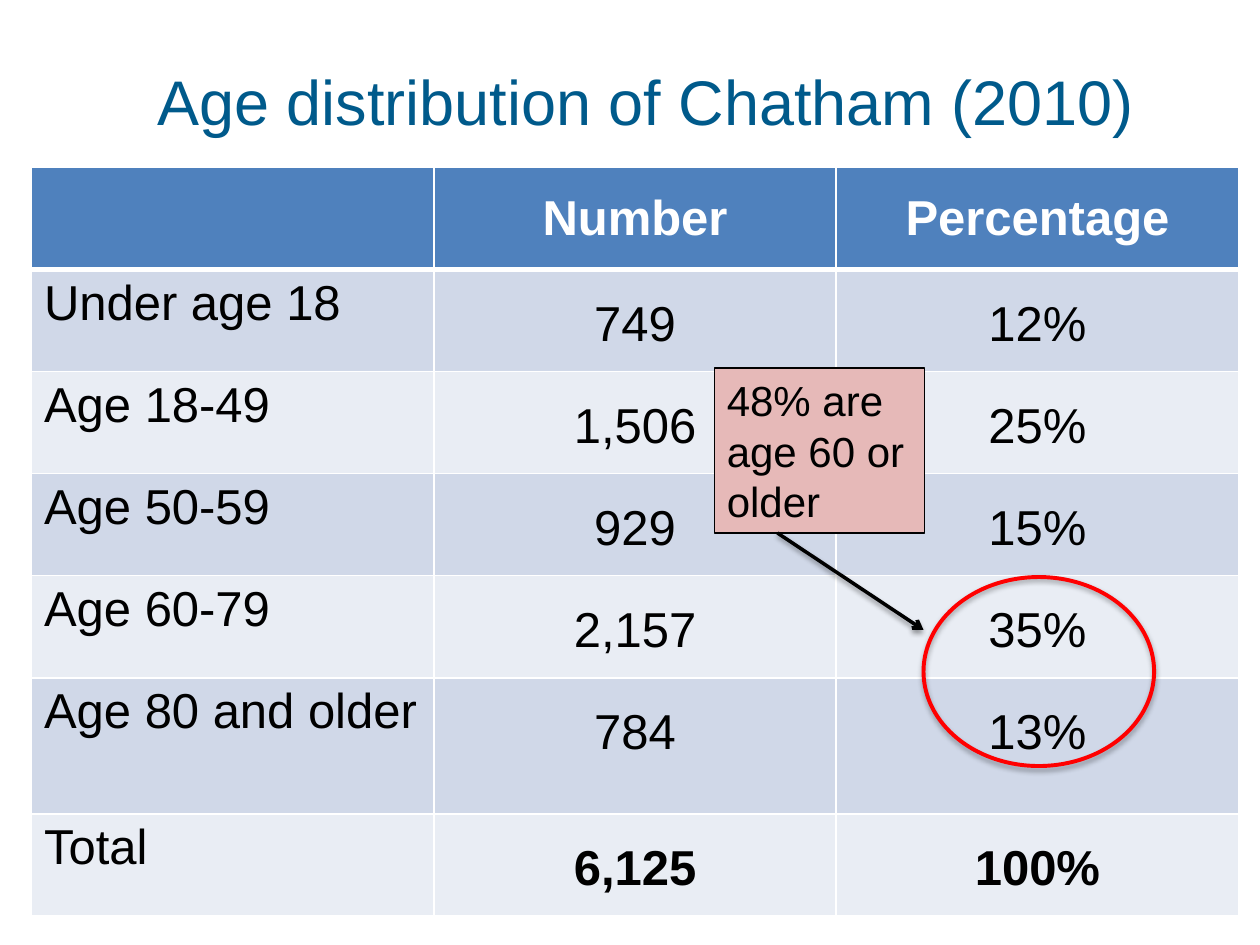
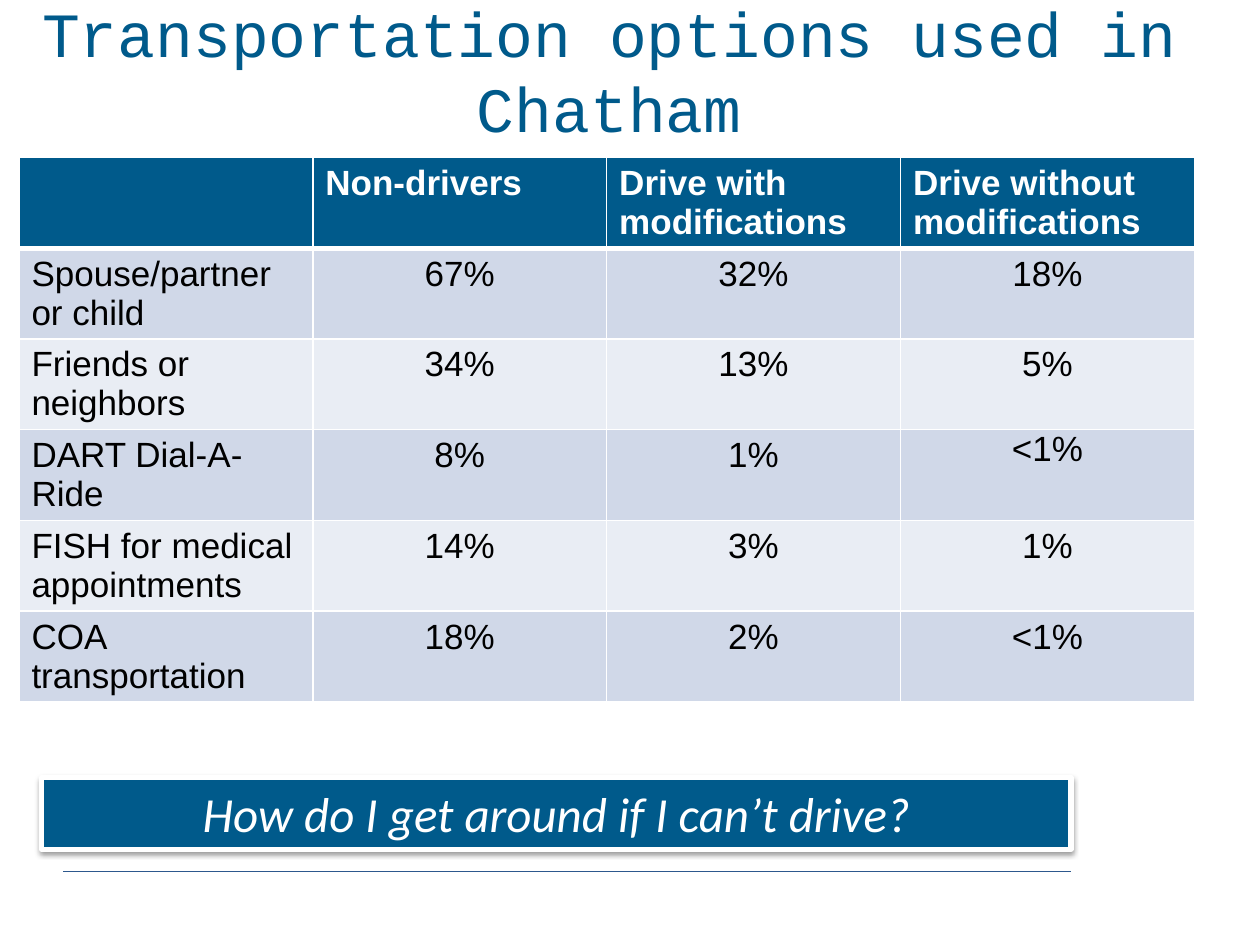
from dataclasses import dataclass

from lxml.etree import SubElement
from pptx import Presentation
from pptx.dml.color import RGBColor as Rgb
from pptx.enum.shapes import MSO_CONNECTOR as Link, MSO_SHAPE as Form
from pptx.enum.text import MSO_ANCHOR as Anchor, MSO_AUTO_SIZE as Auto, PP_ALIGN as Align
from pptx.oxml.ns import qn
from pptx.util import Inches, Pt


@dataclass(frozen=True)
class Theme:
    # Colours
    navy: str = "005A8B"
    rule: str = "2D588D"
    blue: str = "4F81BD"
    bands: tuple = ("D0D8E8", "E9EDF4")
    white: str = "FFFFFF"
    black: str = "000000"
    red: str = "FF0000"
    pink: str = "E6B9B8"
    # Fonts and type sizes
    sans: str = "Arial"
    mono: str = "Courier New"
    soft: str = "Calibri"
    head: int = 36
    large: int = 28
    note: int = 24
    small: int = 20


def put(obj, **values):
    for name, value in values.items():
        setattr(obj, name, value)


def node(parent, tag, **attrs):
    return SubElement(parent, qn(tag), {k: str(v) for k, v in attrs.items()})


def tint(parent, color, **mods):
    clr = node(parent, "a:srgbClr", val=color)
    for name, value in mods.items():
        node(clr, f"a:{name}", val=value)


class Deck:
    def __init__(self, theme):
        self.theme = theme
        self.prs = Presentation()
        put(self.prs, slide_width=Inches(10), slide_height=Inches(7.5))
        self.slide = None

    # Text
    def label(self, frame, text, size, color, font=None, align=Align.LEFT, **style):
        para = frame.paragraphs[0]
        para.alignment = align
        run = para.add_run()
        run.text = text
        put(run.font, name=font or self.theme.sans, size=Pt(size), **style)
        run.font.color.rgb = Rgb.from_string(color)

    def start(self, title, box, font):
        """Add a slide and place its title."""
        self.slide = self.prs.slides.add_slide(self.prs.slide_layouts[5])
        head = self.slide.shapes.title
        left, top, width, height = map(Inches, box)
        put(head, left=left, top=top, width=width, height=height)
        put(head.text_frame, word_wrap=True, auto_size=Auto.NONE,
            vertical_anchor=Anchor.MIDDLE)
        self.label(head.text_frame, title, self.theme.head, self.theme.navy,
                   font, Align.CENTER)

    # Tables
    def edge(self, cell, **widths):
        props = cell._tc.get_or_add_tcPr()
        for side in "LRTB":
            line = node(props, f"a:ln{side}", w=Pt(widths.get(side, 1)))
            tint(node(line, "a:solidFill"), self.theme.white)

    def table(self, rows, at, width, heights, size, fill, align, anchor):
        """Draw a banded table; the first row is the header."""
        t = self.theme
        cols = len(rows[0])
        grid = self.slide.shapes.add_table(
            len(rows), cols, *map(Inches, (*at, width, sum(heights)))).table
        grid.horz_banding = False
        for col in grid.columns:
            col.width = Inches(width / cols)
        for r, (row, height) in enumerate(zip(rows, heights)):
            grid.rows[r].height = Inches(height)
            for c, text in enumerate(row):
                cell = grid.cell(r, c)
                self.edge(cell, **{0: {"B": 3}, 1: {"T": 3}}.get(r, {}))
                cell.fill.solid()
                shade = t.bands[(r - 1) % 2] if r else fill
                cell.fill.fore_color.rgb = Rgb.from_string(shade)
                if r == 0:
                    cell.vertical_anchor = anchor
                    look = dict(color=t.white, bold=True, align=align)
                else:
                    side = Align.CENTER if c else Align.LEFT
                    look = dict(color=t.black, bold=False, align=side)
                if text:
                    self.label(cell.text_frame, text, size, **look)
        return grid

    def tight(self, cell, **spacing):
        put(cell, margin_left=Inches(0.07), margin_right=Inches(0.07),
            margin_top=0, margin_bottom=0)
        put(cell.text_frame.paragraphs[0], **spacing)

    # Shapes and lines
    def stroke(self, item, color, weight):
        item.line.color.rgb = Rgb.from_string(color)
        item.line.width = Pt(weight)

    def shade(self, item, alpha=None, dist=1.6):
        """Set a soft drop shadow, or none without an alpha."""
        fx = node(item._element.spPr, "a:effectLst")
        if alpha:
            drop = node(fx, "a:outerShdw", blurRad=Pt(3.1), dist=Pt(dist),
                        dir=90 * 60000, rotWithShape=0)
            tint(drop, self.theme.black, alpha=alpha * 1000)

    def shape(self, form, box, line, weight, fill=None, **shadow):
        item = self.slide.shapes.add_shape(form, *map(Inches, box))
        if fill:
            item.fill.solid()
            item.fill.fore_color.rgb = Rgb.from_string(fill)
        else:
            item.fill.background()
        self.stroke(item, line, weight)
        self.shade(item, **shadow)
        item.text_frame.word_wrap = True
        return item

    def line(self, start, end, color, weight, arrow=False, **shadow):
        item = self.slide.shapes.add_connector(
            Link.STRAIGHT, *map(Inches, (*start, *end)))
        self.stroke(item, color, weight)
        if arrow:
            node(item._element.spPr.find(qn("a:ln")), "a:tailEnd", type="arrow")
        self.shade(item, **shadow)


AGES = [
    ("", "Number", "Percentage"),
    ("Under age 18", "749", "12%"),
    ("Age 18-49", "1,506", "25%"),
    ("Age 50-59", "929", "15%"),
    ("Age 60-79", "2,157", "35%"),
    ("Age 80 and older", "784", "13%"),
    ("Total", "6,125", "100%"),
]
RIDES = [
    ("", "Non-drivers", "Drive with modifications", "Drive without modifications"),
    ("Spouse/partner or child", "67%", "32%", "18%"),
    ("Friends or neighbors", "34%", "13%", "5%"),
    ("DART Dial-A-Ride", "8%", "1%", "˂1%"),
    ("FISH for medical appointments", "14%", "3%", "1%"),
    ("COA transportation", "18%", "2%", "˂1%"),
]


def ages(deck):
    t = deck.theme
    deck.start("Age distribution of Chatham (2010)", (0.5, 0.17, 9.25, 1.25), t.sans)
    heights = [0.81] * 5 + [1.08, 0.81]
    grid = deck.table(AGES, (0.25, 1.33), 9.58, heights, t.large, t.blue,
                      Align.CENTER, Anchor.MIDDLE)
    last = len(AGES) - 1
    for r in range(1, last + 1):
        for c in (1, 2):
            cell = grid.cell(r, c)
            deck.tight(cell, line_spacing=1.5)
            cell.text_frame.paragraphs[0].runs[0].font.bold = r == last

    # Callout on the two oldest groups
    deck.shape(Form.OVAL, (7.33, 4.58, 1.83, 1.5), t.red, 2.25, alpha=35, dist=1.8)
    note = deck.shape(Form.RECTANGLE, (5.67, 2.92, 1.67, 1.31), t.black, 0.75, t.pink)
    deck.label(note.text_frame, "48% are age 60 or older", t.note, t.black)
    deck.line((6.17, 4.23), (7.33, 5), t.black, 2, arrow=True, alpha=38)


def rides(deck):
    t = deck.theme
    deck.start("Transportation options used in Chatham", (0.17, 0.08, 9.33, 0.95), t.mono)
    deck.line((0.5, 6.92), (8.5, 6.92), t.rule, 0.5)
    grid = deck.table(RIDES, (0.15, 1.25), 9.33, [0.72] * len(RIDES), t.small,
                      t.navy, Align.LEFT, Anchor.TOP)
    deck.tight(grid.cell(3, 3), space_after=Pt(12))

    # Question banner
    bar = deck.shape(Form.RECTANGLE, (0.33, 6.17, 8.17, 0.57), t.white, 3, t.navy, alpha=38)
    deck.label(bar.text_frame, "How do I get around if I can’t drive?", t.large,
               t.white, t.soft, Align.CENTER, italic=True)


def main():
    deck = Deck(Theme())
    ages(deck)
    rides(deck)
    deck.prs.save("out.pptx")


if __name__ == "__main__":
    main()
